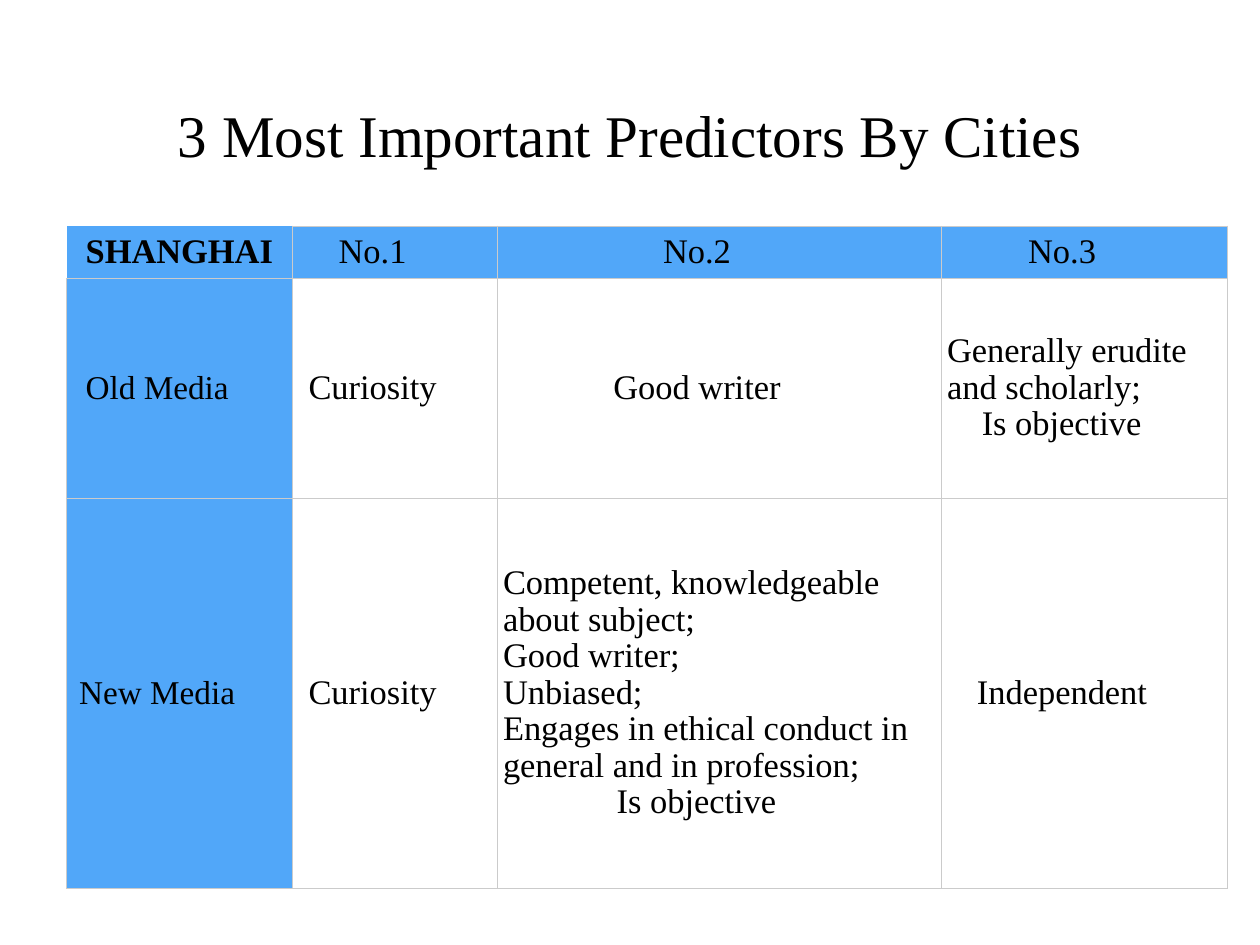
from dataclasses import dataclass

from lxml.etree import SubElement
from pptx import Presentation
from pptx.dml.color import RGBColor
from pptx.enum.text import MSO_ANCHOR as Anchor, MSO_AUTO_SIZE as AutoSize, PP_ALIGN as Align
from pptx.oxml.ns import qn
from pptx.util import Cm, Pt

TITLE = "3 Most Important Predictors By Cities"
HEADER = ["SHANGHAI", "No.1", "No.2", "No.3"]
# A list holds several lines; the last one is set in from the left.
ROWS = [
    HEADER,
    ["Old Media", "Curiosity", "Good writer",
     ["Generally erudite and scholarly;", "Is objective"]],
    ["New Media", "Curiosity",
     ["Competent, knowledgeable about subject;", "Good writer;", "Unbiased;",
      "Engages in ethical conduct in general and in profession;", "Is objective"],
     "Independent"],
]
COLUMN_WIDTHS = [6.48, 5.87, 12.73, 8.2]
ROW_HEIGHTS = [1.5, 6.3, 11.2]
LAST_LINE_WIDTH = 4.6
PADDING = 0.17
CENTRE_SHIFT = 1.27


@dataclass(frozen=True)
class Theme:
    font: str = "Times New Roman"
    text: str = "000000"
    accent: str = "51A7F9"
    plain: str = "FFFFFF"
    border: str = "CBCBCB"
    border_width: float = 0.5
    title_size: int = 48
    cell_size: int = 28
    label_size: int = 27


THEME = Theme()


def write(para, text, size, bold=False, align=Align.CENTER, spacing=1.0, indent=0):
    para.alignment = align
    para.line_spacing = spacing
    if indent:
        para._p.get_or_add_pPr().set("marL", str(Cm(indent)))
    span = para.add_run()
    span.text = text
    span.font.name = THEME.font
    span.font.size = Pt(size)
    span.font.bold = bold
    span.font.color.rgb = RGBColor.from_string(THEME.text)


def draw_borders(cell, sides):
    """Add thin borders ahead of the cell's fill, as the schema orders them."""
    properties = cell._tc.get_or_add_tcPr()
    for position, side in enumerate(sides):
        line = SubElement(properties, qn(f"a:ln{side}"), w=str(Pt(THEME.border_width)))
        fill = SubElement(line, qn("a:solidFill"))
        SubElement(fill, qn("a:srgbClr"), val=THEME.border)
        properties.insert(position, line)


def fill_cell(cell, content, row, column):
    is_corner = row == column == 0
    is_accent = row == 0 or column == 0
    cell.fill.solid()
    cell.fill.fore_color.rgb = RGBColor.from_string(THEME.accent if is_accent else THEME.plain)
    draw_borders(cell, "RB" if is_corner else "LRTB")
    cell.vertical_anchor = Anchor.MIDDLE
    cell.margin_left = cell.margin_right = Cm(PADDING)
    cell.margin_top = cell.margin_bottom = Cm(PADDING if is_corner else 0)
    frame = cell.text_frame
    if isinstance(content, list):
        free_width = COLUMN_WIDTHS[column] - 2 * PADDING - CENTRE_SHIFT
        last_indent = (free_width - LAST_LINE_WIDTH) / 2
        for number, text in enumerate(content):
            para = frame.add_paragraph() if number else frame.paragraphs[0]
            is_last = number == len(content) - 1
            write(para, text, THEME.cell_size, align=Align.LEFT, spacing=0.96,
                  indent=last_indent if is_last else 0)
        return
    if not is_corner:
        cell.margin_right = Cm(PADDING + CENTRE_SHIFT)
    is_label = column == 0 and row > 0
    write(frame.paragraphs[0], content, THEME.label_size if is_label else THEME.cell_size,
          bold=is_corner)


def add_title(page):
    box = page.shapes.title
    box.left, box.top, box.width, box.height = Cm(2.64), Cm(0.64), Cm(30.84), Cm(6)
    frame = box.text_frame
    frame.auto_size = AutoSize.NONE
    frame.word_wrap = True
    frame.vertical_anchor = Anchor.MIDDLE
    frame.margin_left = frame.margin_right = frame.margin_top = frame.margin_bottom = 0
    write(frame.paragraphs[0], TITLE, THEME.title_size, spacing=1.2)


def add_predictor_table(page):
    table = page.shapes.add_table(
        len(ROWS), len(HEADER), Cm(1.9), Cm(6.48),
        Cm(sum(COLUMN_WIDTHS)), Cm(sum(ROW_HEIGHTS))).table
    table.horz_banding = False
    for column, width in zip(table.columns, COLUMN_WIDTHS):
        column.width = Cm(width)
    for row, height in zip(table.rows, ROW_HEIGHTS):
        row.height = Cm(height)
    for row, contents in enumerate(ROWS):
        for column, content in enumerate(contents):
            fill_cell(table.cell(row, column), content, row, column)


def main():
    deck = Presentation()
    deck.slide_width, deck.slide_height = Cm(36.12), Cm(27.1)
    page = deck.slides.add_slide(deck.slide_layouts[5])
    add_title(page)
    add_predictor_table(page)
    deck.save("out.pptx")


if __name__ == "__main__":
    main()
